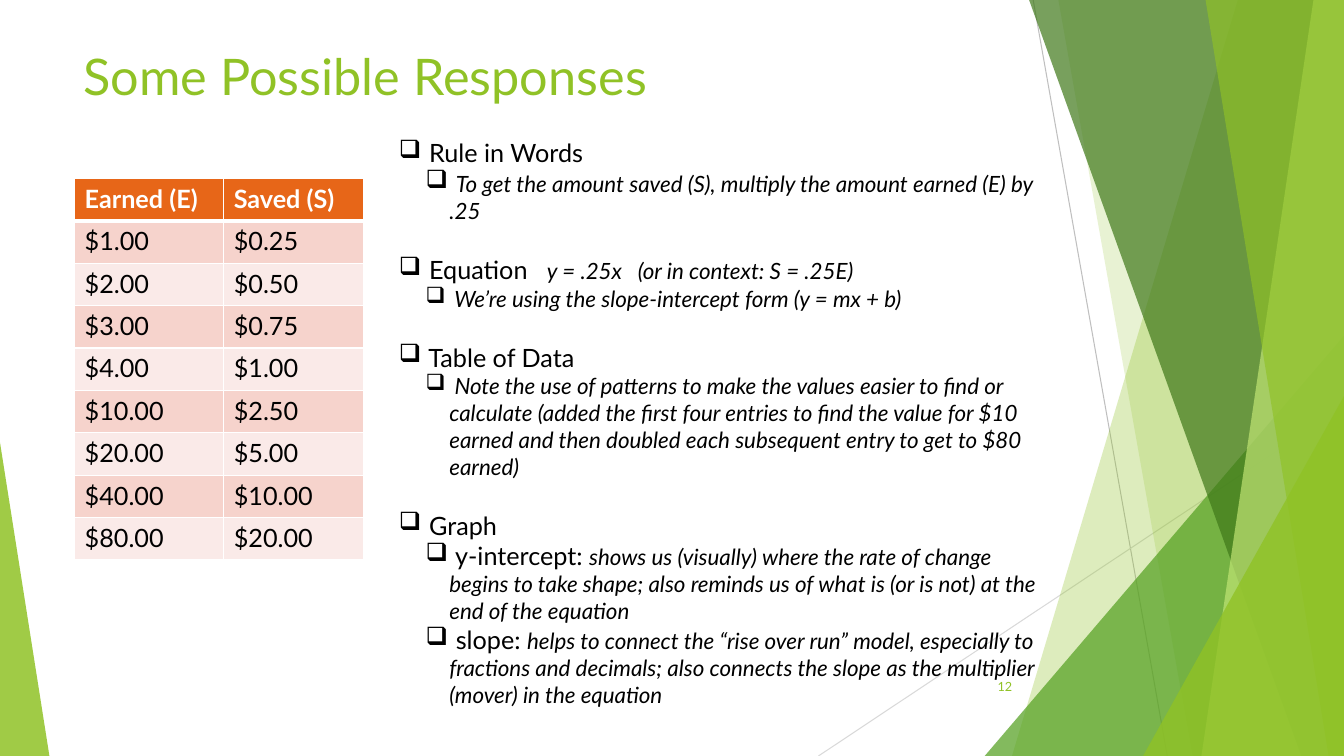
"""Build the slide of possible responses with its table and outline."""
from dataclasses import dataclass

from lxml.etree import SubElement
from pptx import Presentation
from pptx.dml.color import RGBColor
from pptx.enum.shapes import MSO_CONNECTOR, MSO_SHAPE
from pptx.enum.text import MSO_ANCHOR, PP_ALIGN
from pptx.oxml.ns import qn
from pptx.slide import Slide
from pptx.util import Pt

FONT = "Lato"
GREEN = "90C226"
WIDTH, HEIGHT = 960, 540


@dataclass
class Line:
    """A thin straight line behind the text."""
    x1: float
    y1: float
    x2: float
    y2: float
    color: str


@dataclass
class Band:
    """A translucent band from a slanted edge to the right side."""
    top_x: float
    bottom_x: float
    color: str
    alpha: int


@dataclass
class Corner:
    """A translucent triangle standing on the bottom edge."""
    left: float
    top: float
    width: float
    apex: float
    color: str
    alpha: int


@dataclass
class Item:
    """An outline paragraph made of a plain lead and an italic rest."""
    level: int
    lead: str
    rest: str = ""


LINES = [Line(738, 0, 833.8, HEIGHT, "BFBFBF"),
         Line(WIDTH, 290.2, 584.6, HEIGHT, "D9D9D9")]
DECOR = [
    Band(884.2, 722.9, GREEN, 30),
    Band(756, 851.8, GREEN, 20),
    Corner(703.4, 239.8, 256.6, 1, "54A021", 72),
    Band(735.1, 929.5, "3F7819", 70),
    Band(938.2, 858.2, "C0E474", 70),
    Band(861.1, 949, GREEN, 65),
    Corner(816.5, 283, 143.5, 1, GREEN, 80),
    Corner(0, 316.1, 35.3, 0, GREEN, 85),
]
ROWS = [
    ("Earned (E)", "Saved (S)"), ("$1.00", "$0.25"), ("$2.00", "$0.50"),
    ("$3.00", "$0.75"), ("$4.00", "$1.00"), ("$10.00", "$2.50"),
    ("$20.00", "$5.00"), ("$40.00", "$10.00"), ("$80.00", "$20.00"),
]
ITEMS = [
    Item(0, " Rule in Words"),
    Item(1, " ", "To get the amount saved (S), multiply the amount earned (E) by .25"),
    Item(0, " Equation   ", "y = .25x   (or in context: S = .25E)"),
    Item(1, "", " We’re using the slope-intercept form (y = mx + b)"),
    Item(0, " Table of Data"),
    Item(1, "", " Note the use of patterns to make the values easier to find or "
         "calculate (added the first four entries to find the value for $10 earned "
         "and then doubled each subsequent entry to get to $80 earned)"),
    Item(0, " Graph"),
    Item(1, " y-intercept: ", "shows us (visually) where the rate of change begins to "
         "take shape; also reminds us of what is (or is not) at the end of the equation"),
    Item(1, " slope: ", "helps to connect the “rise over run” model, especially to "
         "fractions and decimals; also connects the slope as the multiplier (mover) "
         "in the equation"),
]


def rgb(value: str) -> RGBColor:
    """Turn a hex string into a colour."""
    return RGBColor.from_string(value)


def write(p, text: str, size: float = 18, color: str = "000000",
          bold: bool = False, italic: bool = False) -> None:
    """Add a formatted run to a paragraph."""
    r = p.add_run()
    r.text = text
    r.font.name, r.font.size = FONT, Pt(size)
    r.font.bold, r.font.italic = bold, italic
    r.font.color.rgb = rgb(color)


def add_line(s: Slide, line: Line) -> None:
    """Draw a straight line without a shadow."""
    c = s.shapes.add_connector(MSO_CONNECTOR.STRAIGHT, Pt(line.x1), Pt(line.y1),
                               Pt(line.x2), Pt(line.y2))
    c.line.color.rgb, c.line.width = rgb(line.color), Pt(0.75)
    SubElement(c._element.spPr, qn("a:effectLst"))


def add_decor(s: Slide, item: Band | Corner) -> None:
    """Draw a translucent band or corner."""
    if isinstance(item, Band):
        fb = s.shapes.build_freeform(Pt(item.top_x), 0)
        fb.add_line_segments([(Pt(WIDTH), 0), (Pt(WIDTH), Pt(HEIGHT)),
                              (Pt(item.bottom_x), Pt(HEIGHT))])
        sp = fb.convert_to_shape()
    else:
        sp = s.shapes.add_shape(MSO_SHAPE.ISOSCELES_TRIANGLE, Pt(item.left), Pt(item.top),
                                Pt(item.width), Pt(HEIGHT - item.top))
        sp.adjustments[0] = item.apex
    sp.shadow.inherit = False
    sp.line.fill.background()
    sp.fill.solid()
    sp.fill.fore_color.rgb = rgb(item.color)
    clr = sp._element.spPr.find(".//" + qn("a:srgbClr"))
    SubElement(clr, qn("a:alpha"), val=str(item.alpha * 1000))


def border_cell(cell, bottom: float) -> None:
    """Give a cell white borders, placed before its fill."""
    pr = cell._tc.get_or_add_tcPr()
    for i, (tag, width) in enumerate([("a:lnL", 1), ("a:lnR", 1),
                                      ("a:lnT", 1), ("a:lnB", bottom)]):
        ln = SubElement(pr, qn(tag), w=str(Pt(width)))
        SubElement(SubElement(ln, qn("a:solidFill")), qn("a:srgbClr"), val="FFFFFF")
        pr.insert(i, ln)


def add_data(s: Slide) -> None:
    """Add the table of earned and saved amounts."""
    row_height = 30.3
    table = s.shapes.add_table(len(ROWS), 2, Pt(53.3), Pt(127.5), Pt(206.6),
                               Pt(row_height * len(ROWS))).table
    for column, width in zip(table.columns, (106.5, 100.1)):
        column.width = Pt(width)
    for i, row in enumerate(ROWS):
        table.rows[i].height = Pt(row_height)
        head = i == 0
        fill = "E76618" if head else ("FAEAE8", "F6D3CC")[i % 2]
        for j, text in enumerate(row):
            cell = table.cell(i, j)
            cell.fill.solid()
            cell.fill.fore_color.rgb = rgb(fill)
            border_cell(cell, 3 if head else 1)
            write(cell.text_frame.paragraphs[0], text, bold=head,
                  color="FFFFFF" if head else "000000")


def add_box(s: Slide, left: float, top: float, width: float, height: float):
    """Add a wrapping text box and return its text frame."""
    tf = s.shapes.add_textbox(Pt(left), Pt(top), Pt(width), Pt(height)).text_frame
    tf.word_wrap = True
    return tf


def add_outline(s: Slide) -> None:
    """Add the bulleted outline of responses."""
    tf = add_box(s, 277.9, 94.3, 479.5, 419)
    for i, item in enumerate(ITEMS):
        p = tf.paragraphs[0] if i == 0 else tf.add_paragraph()
        p.level = item.level
        if i and item.level == 0:
            p.space_before = Pt(21.6)
        pr = p._p.get_or_add_pPr()
        pr.set("marL", str(Pt(36 if item.level else 17)))
        pr.set("indent", str(Pt(-17)))
        SubElement(pr, qn("a:buChar"), char="❑")
        if item.lead:
            write(p, item.lead)
        if item.rest:
            write(p, item.rest, size=16, italic=True)


def main() -> None:
    """Build and save the slide."""
    prs = Presentation()
    prs.slide_width, prs.slide_height = Pt(WIDTH), Pt(HEIGHT)
    s = prs.slides.add_slide(prs.slide_layouts[5])
    for line in LINES:
        add_line(s, line)
    for item in DECOR:
        add_decor(s, item)
    title = s.shapes.title
    title.left, title.top, title.width, title.height = Pt(52.6), Pt(28.8), Pt(676.8), Pt(103.7)
    title.text_frame.vertical_anchor = MSO_ANCHOR.TOP
    p = title.text_frame.paragraphs[0]
    p.alignment = PP_ALIGN.LEFT
    write(p, "Some Possible Responses", size=36, color=GREEN)
    add_data(s)
    add_outline(s)
    tf = add_box(s, 676.1, 475.9, 54, 28.8)
    tf.vertical_anchor = MSO_ANCHOR.MIDDLE
    p = tf.paragraphs[0]
    p.alignment = PP_ALIGN.RIGHT
    write(p, "12", size=9, color=GREEN)
    prs.save("out.pptx")


if __name__ == "__main__":
    main()
